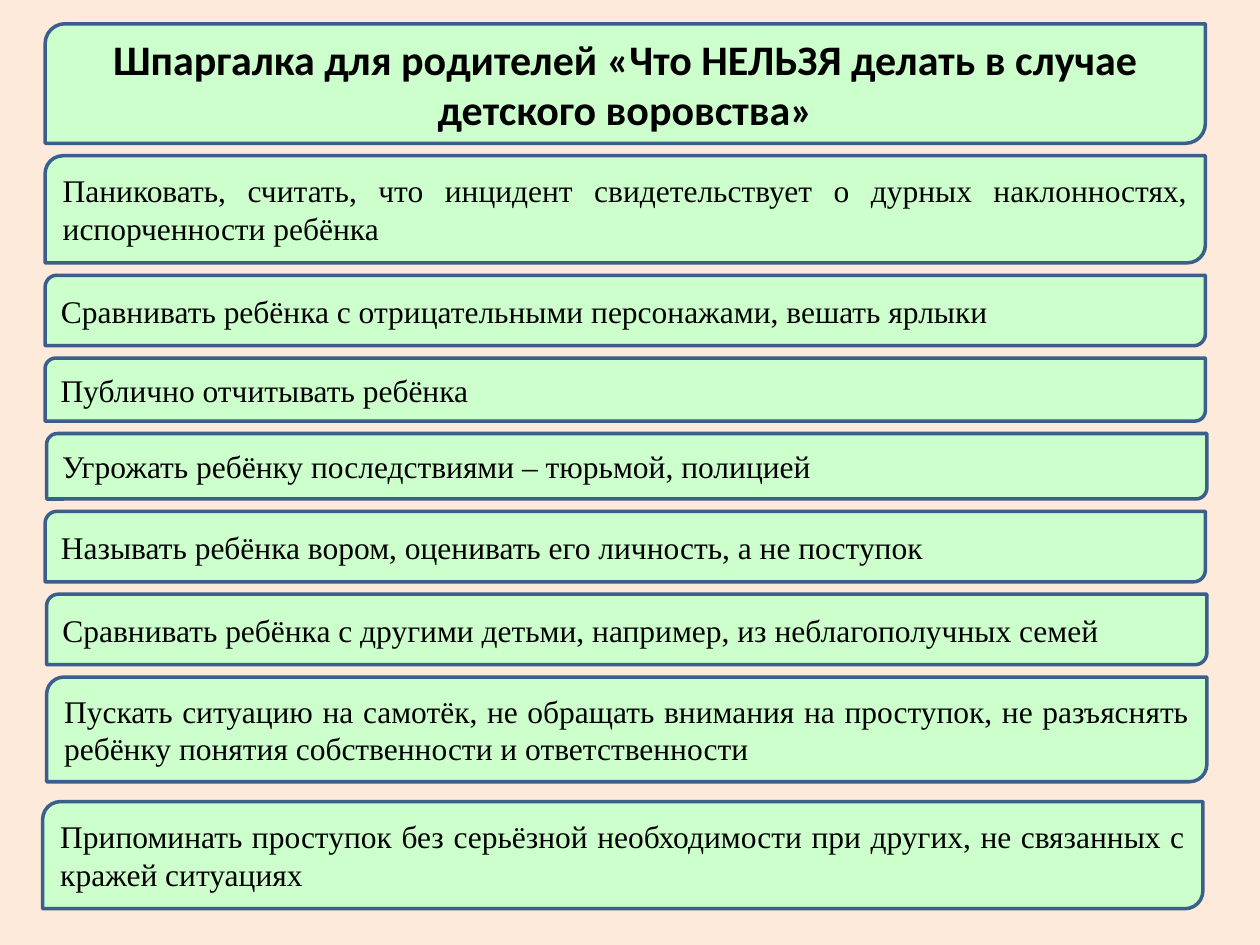
from pptx import Presentation
from pptx.dml.color import RGBColor
from pptx.enum.shapes import MSO_SHAPE as Shape
from pptx.enum.text import MSO_ANCHOR as Anchor, MSO_AUTO_SIZE as AutoSize, PP_ALIGN as Align
from pptx.util import Cm, Pt

COLORS = {"page": "FDEADA", "card": "CCFFCC", "border": "3A5F8C", "text": "000000"}
TITLE = "Шпаргалка для родителей «Что НЕЛЬЗЯ делать в случае детского воровства»"
TITLE_PLACE = (0.91, 0.48, 23.39, 2.41)
CARD_WIDTH = 23.39
GAP = 0.25
LAST_GAP = 0.4

CARDS = [
    (0.91, 2.16, "Паниковать, считать, что инцидент свидетельствует о дурных наклонностях, испорченности ребёнка"),
    (0.91, 1.42, "Сравнивать ребёнка с отрицательными персонажами, вешать ярлыки"),
    (0.91, 1.27, "Публично отчитывать ребёнка"),
    (0.94, 1.32, "Угрожать ребёнку последствиями – тюрьмой, полицией"),
    (0.91, 1.42, "Называть ребёнка вором, оценивать его личность, а не поступок"),
    (0.94, 1.42, "Сравнивать ребёнка с другими детьми, например, из неблагополучных семей"),
    (0.94, 2.11, "Пускать ситуацию на самотёк, не обращать внимания на проступок, "
                 "не разъяснять ребёнку понятия собственности и ответственности"),
    (0.86, 2.16, "Припоминать проступок без серьёзной необходимости при других, не связанных с кражей ситуациях"),
]


def color(name):
    return RGBColor.from_string(COLORS[name])


def write(box, text, font="Times New Roman", size=18, bold=False, align=Align.JUSTIFY):
    frame = box.text_frame
    frame.word_wrap = True
    frame.auto_size = AutoSize.NONE
    frame.vertical_anchor = Anchor.MIDDLE
    para = frame.paragraphs[0]
    para.alignment = align
    span = para.add_run()
    span.text = text
    span.font.name = font
    span.font.size = Pt(size)
    span.font.bold = bold
    span.font.color.rgb = color("text")


class Sheet:
    def __init__(self, deck):
        self.page = deck.slides.add_slide(deck.slide_layouts[5])
        background = self.page.background.fill
        background.solid()
        background.fore_color.rgb = color("page")

    def card(self, left, top, width, height, text=None):
        place = map(Cm, (left, top, width, height))
        box = self.page.shapes.add_shape(Shape.ROUND_2_DIAG_RECTANGLE, *place)
        box.shadow.inherit = False
        box.fill.solid()
        box.fill.fore_color.rgb = color("card")
        box.line.color.rgb = color("border")
        box.line.width = Pt(2)
        if text:
            write(box, text)
        return box

    def title(self, text, place):
        box = self.page.shapes.title
        box.left, box.top, box.width, box.height = map(Cm, place)
        write(box, text, font="Calibri", size=24, bold=True, align=Align.CENTER)
        plate = self.card(*place)
        box.element.addprevious(plate.element)


def main():
    deck = Presentation()
    deck.slide_width, deck.slide_height = Cm(25.4), Cm(19.05)
    sheet = Sheet(deck)
    sheet.title(TITLE, TITLE_PLACE)
    bottom = TITLE_PLACE[1] + TITLE_PLACE[3]
    for number, (left, height, text) in enumerate(CARDS, 1):
        top = bottom + (LAST_GAP if number == len(CARDS) else GAP)
        sheet.card(left, top, CARD_WIDTH, height, text)
        bottom = top + height
    deck.save("out.pptx")


if __name__ == "__main__":
    main()
